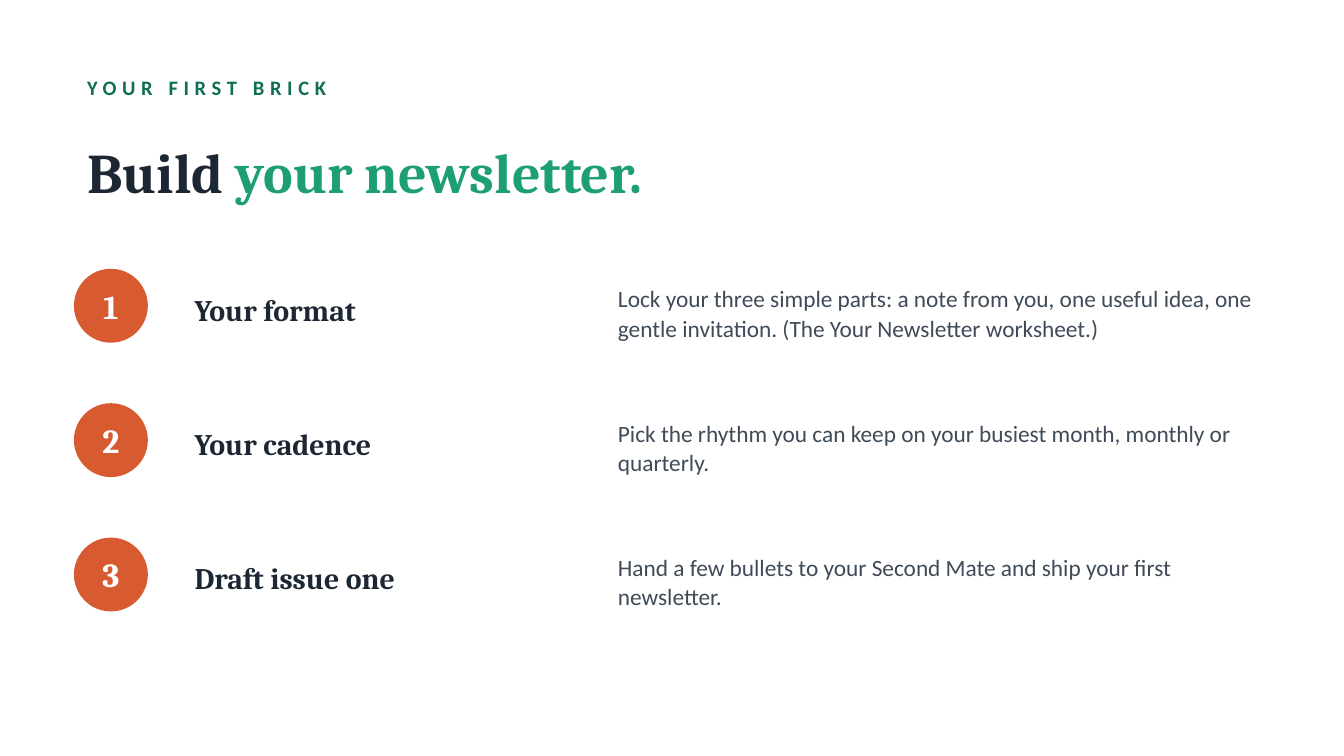
"""Build the "Build your newsletter" slide with its three numbered steps."""
from pptx import Presentation, util as u
from pptx.dml.color import RGBColor
from pptx.enum import shapes, text

PX = u.Inches(1) // 200
COLORS = {"eyebrow": "0F6E56", "ink": "1C2733", "accent": "1D9E75",
          "badge": "D85A30", "white": "FFFFFF", "body": "3F4B59"}
FORMATS = {
    "eyebrow": {"size": u.Pt(11), "name": "Calibri", "bold": True},
    "title": {"size": u.Pt(30), "name": "Cambria", "bold": True},
    "number": {"size": u.Pt(18), "name": "Cambria", "bold": True},
    "heading": {"size": u.Pt(16), "name": "Cambria", "bold": True},
    "detail": {"size": u.Pt(12.5), "name": "Calibri", "bold": False},
}
STEPS = [
    ("Your format", "Lock your three simple parts: a note from you, one useful idea, "
                    "one gentle invitation. (The Your Newsletter worksheet.)"),
    ("Your cadence", "Pick the rhythm you can keep on your busiest month, monthly or quarterly."),
    ("Draft issue one", "Hand a few bullets to your Second Mate and ship your first newsletter."),
]


def box(*lengths):
    """Turn px lengths into EMU."""
    return [length * PX for length in lengths]


def write(holder, style, *pieces, align=text.PP_ALIGN.LEFT):
    """Fill a shape with one paragraph of (wording, color) pieces."""
    frame = holder.text_frame
    for key, value in {"word_wrap": True, "auto_size": text.MSO_AUTO_SIZE.NONE,
                       "vertical_anchor": text.MSO_ANCHOR.MIDDLE}.items():
        setattr(frame, key, value)
    paragraph = frame.paragraphs[0]
    paragraph.alignment = align
    for wording, color in pieces:
        run = paragraph.add_run()
        run.text = wording
        for key, value in FORMATS[style].items():
            setattr(run.font, key, value)
        run.font.color.rgb = RGBColor.from_string(COLORS[color])
    return paragraph


deck = Presentation()
deck.slide_width, deck.slide_height = box(2000, 1125)
slide = deck.slides.add_slide(deck.slide_layouts[5])

eyebrow = slide.shapes.add_textbox(*box(110, 100, 1780, 60))
spaced = write(eyebrow, "eyebrow", ("YOUR FIRST BRICK", "eyebrow"))
spaced.runs[0]._r.get_or_add_rPr().set("spc", "300")

title = slide.shapes.title
title.left, title.top, title.width, title.height = box(110, 170, 1780, 170)
write(title, "title", ("Build ", "ink"), ("your newsletter.", "accent"))

for index, (heading, detail) in enumerate(STEPS):
    top = 400 + 200 * index

    badge = slide.shapes.add_shape(shapes.MSO_SHAPE.OVAL, *box(110, top, 110, 110))
    badge.shadow.inherit = False
    badge.fill.solid()
    badge.fill.fore_color.rgb = RGBColor.from_string(COLORS["badge"])
    badge.line.fill.background()
    for side in ("left", "top", "right", "bottom"):
        setattr(badge.text_frame, f"margin_{side}", 0)
    write(badge, "number", (str(index + 1), "white"), align=text.PP_ALIGN.CENTER)

    heading_box = slide.shapes.add_textbox(*box(270, top - 10, 600, 140))
    write(heading_box, "heading", (heading, "ink"))

    detail_box = slide.shapes.add_textbox(*box(900, top - 10, 1000, 150))
    write(detail_box, "detail", (detail, "body")).line_spacing = 1.05

deck.save("out.pptx")
